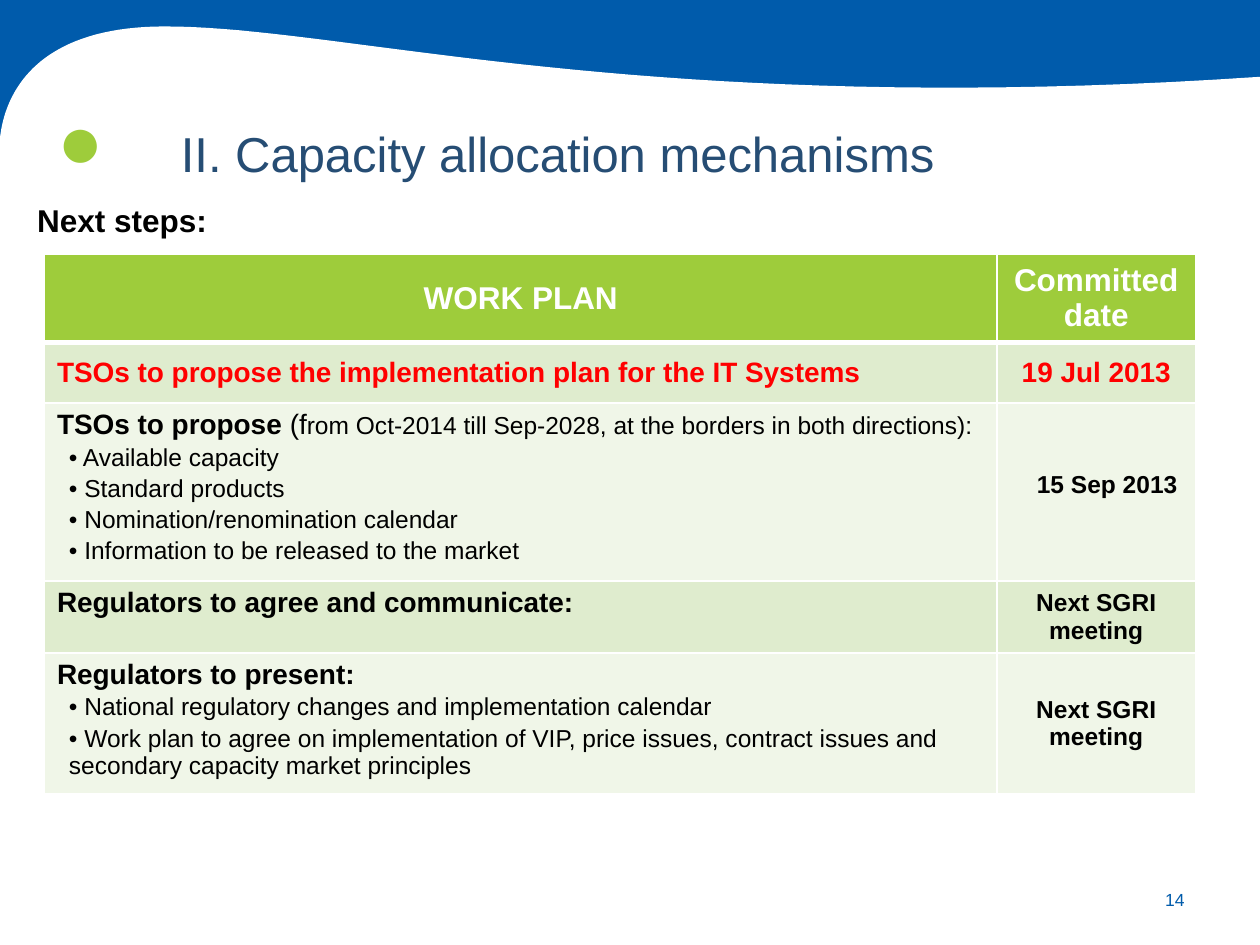
from lxml import etree
from pptx import Presentation
from pptx.dml.color import RGBColor
from pptx.enum.shapes import MSO_SHAPE
from pptx.enum.text import MSO_ANCHOR, MSO_AUTO_SIZE, PP_ALIGN
from pptx.oxml.ns import qn
from pptx.util import Pt

RECTANGLE = MSO_SHAPE.RECTANGLE
LEFT, CENTER, RIGHT = PP_ALIGN.LEFT, PP_ALIGN.CENTER, PP_ALIGN.RIGHT
TOP, MIDDLE, BOTTOM = MSO_ANCHOR.TOP, MSO_ANCHOR.MIDDLE, MSO_ANCHOR.BOTTOM

BLUE = RGBColor(0x00, 0x5B, 0xAB)
NAVY = RGBColor(0x26, 0x4D, 0x74)
GREEN = RGBColor(0x9E, 0xCC, 0x3B)
BAND = RGBColor(0xDF, 0xEC, 0xCE)
PALE = RGBColor(0xF0, 0xF6, 0xE8)
RED = RGBColor(0xFF, 0x00, 0x00)
BLACK = RGBColor(0x00, 0x00, 0x00)
WHITE = RGBColor(0xFF, 0xFF, 0xFF)

FONT = "Arial"
SLIDE_W, SLIDE_H = 720, 540
BANNER_H = 82.8
# Upper edge of the white page, as two joined Bezier curves
PAGE_CURVES = [
    [(0, 79.2), (2.2, 57.6), (16.6, 15.1), (94.3, 15.1)],
    [(94.3, 15.1), (198.7, 15.1), (367.2, 67.7), (720, 43.9)],
]
CURVE_STEPS = 40
UNITS_PER_POINT = 100

TITLE = "II. Capacity allocation mechanisms"
SUBTITLE = "Next steps:"
PAGE_NUMBER = "14"

HEADER = dict(size=18, bold=True, color=WHITE)
URGENT = dict(size=16, bold=True, color=RED)
TASK = dict(size=16, bold=True, color=BLACK)
NOTE = dict(size=16, bold=False, color=BLACK)
DETAIL = dict(size=14, bold=False, color=BLACK)
DATE = dict(size=14, bold=True, color=BLACK)

# Each row: height, fill, task anchor, task runs, bullets, date, date format
ROWS = [
    (50.2, GREEN, MIDDLE, [("WORK PLAN", HEADER)], [], "Committed date", HEADER),
    (34.8, BAND, MIDDLE,
     [("TSOs to propose the implementation plan for the IT Systems", URGENT)],
     [], "19 Jul 2013", URGENT),
    (101.6, PALE, TOP,
     [("TSOs to propose ", TASK), ("(f", NOTE),
      ("rom Oct-2014 till Sep-2028, at the borders in both directions):", DETAIL)],
     ["Available capacity", "Standard products", "Nomination/renomination calendar",
      "Information to be released to the market"],
     "15 Sep 2013", DATE),
    (41.1, BAND, TOP, [("Regulators to agree and communicate:", TASK)], [],
     "Next SGRI meeting", DATE),
    (80.6, PALE, TOP, [("Regulators to present:", TASK)],
     ["National regulatory changes and implementation calendar",
      "Work plan to agree on implementation of VIP, price issues, contract issues "
      "and secondary capacity market principles"],
     "Next SGRI meeting", DATE),
]
HEADER_ROW, OFFSET_DATE_ROW = 0, 2
COL_WIDTHS = [544.4, 113.3]
TABLE_LEFT, TABLE_TOP = 25.4, 145.4


def add_run(p, text, size, color, bold=False):
    r = p.add_run()
    r.text = text
    for name, value in dict(name=FONT, size=Pt(size), bold=bold).items():
        setattr(r.font, name, value)
    r.font.color.rgb = color


def set_bullet(p, char=None, margin=0):
    """Give the paragraph a bullet character, or none, with a flush indent."""
    pPr = p._p.get_or_add_pPr()
    pPr.set("marL", str(Pt(margin)))
    pPr.set("indent", "0")
    if char:
        etree.SubElement(pPr, qn("a:buFont")).set("typeface", FONT)
        etree.SubElement(pPr, qn("a:buChar")).set("char", char)
    else:
        etree.SubElement(pPr, qn("a:buNone"))


def place(sp, left, top, width, height, anchor):
    sp.left, sp.top, sp.width, sp.height = (Pt(v) for v in (left, top, width, height))
    tf = sp.text_frame
    tf.auto_size = MSO_AUTO_SIZE.NONE
    tf.word_wrap = True
    tf.vertical_anchor = anchor
    return tf


def write_line(tf, text, align, **fmt):
    p = tf.paragraphs[0]
    p.alignment = align
    p.space_before = Pt(0)
    add_run(p, text, **fmt)
    return p


def set_borders(cell, widths):
    tcPr = cell._tc.get_or_add_tcPr()
    for i, (side, width) in enumerate(widths.items()):
        ln = etree.Element(qn("a:ln" + side), w=str(Pt(width)))
        fill = etree.SubElement(ln, qn("a:solidFill"))
        etree.SubElement(fill, qn("a:srgbClr")).set("val", str(WHITE))
        tcPr.insert(i, ln)


def bezier(points, t):
    weights = ((1 - t) ** 3, 3 * t * (1 - t) ** 2, 3 * t * t * (1 - t), t ** 3)
    return tuple(sum(w * pt[axis] for w, pt in zip(weights, points)) for axis in (0, 1))


def add_backdrop(slide):
    """Put a blue banner and the curved white page behind the placeholders."""
    banner = slide.shapes.add_shape(RECTANGLE, 0, 0, Pt(SLIDE_W), Pt(BANNER_H))
    outline = [bezier(c, i / CURVE_STEPS) for c in PAGE_CURVES
               for i in range(CURVE_STEPS + 1)]
    outline += [(SLIDE_W, SLIDE_H), (0, SLIDE_H)]
    points = [(x * UNITS_PER_POINT, y * UNITS_PER_POINT) for x, y in outline]
    builder = slide.shapes.build_freeform(*points[0], scale=Pt(1) / UNITS_PER_POINT)
    builder.add_line_segments(points[1:], close=True)
    page = builder.convert_to_shape()
    first = slide.shapes.title._element
    for sp, color in ((banner, BLUE), (page, WHITE)):
        sp.shadow.inherit = False
        sp.fill.solid()
        sp.fill.fore_color.rgb = color
        sp.line.fill.background()
        first.addprevious(sp._element)


def add_work_plan(slide):
    heights = [row[0] for row in ROWS]
    frame = slide.shapes.add_table(
        len(ROWS), len(COL_WIDTHS), Pt(TABLE_LEFT), Pt(TABLE_TOP),
        Pt(sum(COL_WIDTHS)), Pt(sum(heights)))
    table = frame.table
    table.horz_banding = False
    for col, width in zip(table.columns, COL_WIDTHS):
        col.width = Pt(width)
    for i, (height, fill, anchor, runs, bullets, date, date_fmt) in enumerate(ROWS):
        table.rows[i].height = Pt(height)
        task_cell, date_cell = table.cell(i, 0), table.cell(i, 1)
        for cell, cell_anchor in ((task_cell, anchor), (date_cell, MIDDLE)):
            cell.fill.solid()
            cell.fill.fore_color.rgb = fill
            cell.vertical_anchor = cell_anchor
            set_borders(cell, dict(L=1, R=1, T=3 if i == HEADER_ROW + 1 else 1,
                                   B=3 if i == HEADER_ROW else 1))
        p = task_cell.text_frame.paragraphs[0]
        p.alignment = CENTER if i == HEADER_ROW else LEFT
        for text, fmt in runs:
            add_run(p, text, **fmt)
        for text in bullets:
            p = task_cell.text_frame.add_paragraph()
            set_bullet(p, "•", 6.8)
            p.space_before = Pt(2)
            add_run(p, " " + text, **DETAIL)
        p = write_line(date_cell.text_frame, date, CENTER, **date_fmt)
        if i == OFFSET_DATE_ROW:
            p.alignment = LEFT
            set_bullet(p, margin=15.5)
            date_cell.margin_bottom = Pt(11.6)


def main():
    prs = Presentation()
    prs.slide_width, prs.slide_height = Pt(SLIDE_W), Pt(SLIDE_H)
    slide = prs.slides.add_slide(prs.slide_layouts[1])
    title, body = slide.placeholders

    add_backdrop(slide)

    tf = place(title, 3.6, 60.2, 630, 44, TOP)
    write_line(tf, TITLE, CENTER, size=28, color=NAVY).line_spacing = 1.2

    tf = place(body, 14, 111.2, 692, 28.8, MIDDLE)
    set_bullet(tf.paragraphs[0])
    write_line(tf, SUBTITLE, LEFT, size=18, color=BLACK, bold=True)

    tf = place(slide.shapes.add_textbox(0, 0, 0, 0), 26.2, 41, 39.6, 67.7, BOTTOM)
    tf.margin_left = tf.margin_right = 0
    write_line(tf, "●", CENTER, size=44, color=GREEN)

    add_work_plan(slide)

    tf = place(slide.shapes.add_textbox(0, 0, 0, 0), 643.7, 499.7, 40.3, 28.8, MIDDLE)
    write_line(tf, PAGE_NUMBER, RIGHT, size=10, color=BLUE)

    prs.save("out.pptx")


if __name__ == "__main__":
    main()
